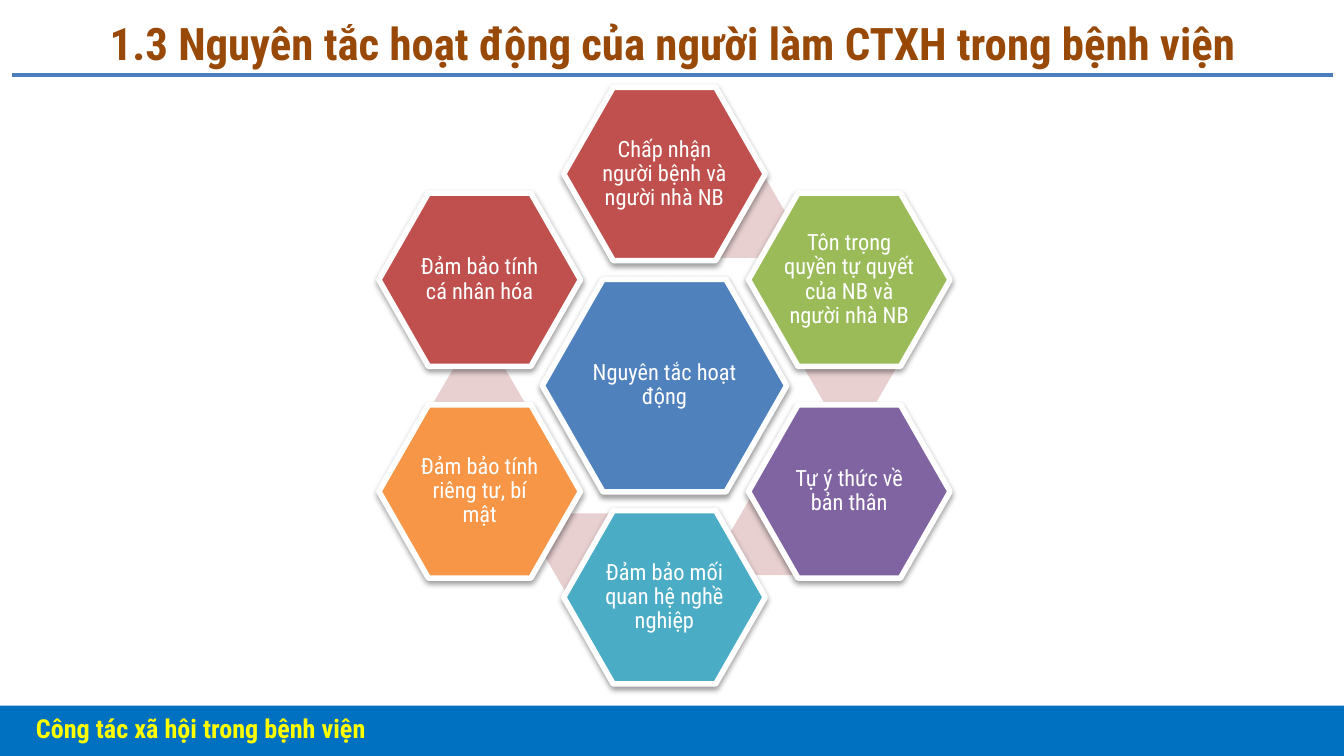
from typing import NamedTuple, Optional

from lxml.etree import SubElement
from pptx import Presentation
from pptx.dml.color import RGBColor
from pptx.enum.shapes import MSO_CONNECTOR as Connector, MSO_SHAPE as Shape
from pptx.enum.text import MSO_ANCHOR as Anchor, PP_ALIGN as Align
from pptx.oxml.ns import qn
from pptx.util import Pt

FONT = "Roboto Condensed"
COLORS = {
    "title": "984807", "rule": "4B7EBC", "band": "0070C0", "footer": "FFFF00",
    "white": "FFFFFF", "black": "000000", "accent": "E8D0D0",
    "blue": "4F81BD", "red": "C0504D", "green": "9BBB59",
    "purple": "8064A2", "teal": "4BACC6", "orange": "F79646",
}

# Ring geometry, in points
CENTER_X, CENTER_Y = 356, 206.6
COLUMN_STEP, ROW_STEP = 99, 56.7
CORE_SIZE = (131, 113.8)
PRINCIPLE_SIZE = (108, 92.9)
ACCENT_SIZE = (49.7, 42.5)


class Principle(NamedTuple):
    text: str
    color: str
    column: int
    row: int
    accent: Optional[tuple[float, float]] = None  # offset from the ring's center


PRINCIPLES = [
    Principle("Chấp nhận người bệnh và người nhà NB", "red", 0, -2, (41.8, -89.6)),
    Principle("Tôn trọng quyền tự quyết của NB và người nhà NB", "green", 1, -1, (99.4, -9.7)),
    Principle("Tự ý thức về bản thân", "purple", 1, 1, (59.1, 80.3)),
    Principle("Đảm bảo mối quan hệ nghề nghiệp", "teal", 0, 2, (-40.3, 89.7)),
    Principle("Đảm bảo tính riêng tư, bí mật", "orange", -1, 1, (-99.3, 9.8)),
    Principle("Đảm bảo tính cá nhân hóa", "red", -1, -1),
]


def rgb(name: str) -> RGBColor:
    return RGBColor.from_string(COLORS[name])


def write(frame, text: str, size: float, color: str, align, bold: bool = False):
    frame.word_wrap = True
    para = frame.paragraphs[0]
    para.alignment = align
    span = para.add_run()
    span.text = text
    span.font.name = FONT
    span.font.size = Pt(size)
    span.font.bold = bold
    span.font.color.rgb = rgb(color)
    return para


def add_filled(page, kind, left: float, top: float, width: float, height: float, color: str):
    shape = page.shapes.add_shape(kind, Pt(left), Pt(top), Pt(width), Pt(height))
    shape.shadow.inherit = False
    shape.fill.solid()
    shape.fill.fore_color.rgb = rgb(color)
    shape.line.fill.background()
    return shape


def add_hexagon(page, dx: float, dy: float, size: tuple[float, float], color: str):
    """Draw a hexagon whose middle is (dx, dy) away from the ring's center."""
    width, height = size
    hexagon = add_filled(page, Shape.HEXAGON, CENTER_X + dx - width / 2,
                         CENTER_Y + dy - height / 2, width, height, color)
    hexagon.adjustments[0] = 0.29
    return hexagon


def add_drop_shadow(shape) -> None:
    effects = shape._element.spPr.find(qn("a:effectLst"))
    shadow = SubElement(effects, qn("a:outerShdw"), blurRad=str(Pt(3.1)),
                        dist=str(Pt(1.6)), dir="5400000", rotWithShape="0")
    color = SubElement(shadow, qn("a:srgbClr"), val=COLORS["black"])
    SubElement(color, qn("a:alpha"), val="38000")


def add_label_hexagon(page, text: str, dx: float, dy: float,
                      size: tuple[float, float], color: str) -> None:
    hexagon = add_hexagon(page, dx, dy, size, color)
    hexagon.adjustments[0] = 0.286
    hexagon.line.color.rgb = rgb("white")
    hexagon.line.width = Pt(3)
    add_drop_shadow(hexagon)
    frame = hexagon.text_frame
    frame.margin_left = frame.margin_right = Pt(1.2)
    frame.margin_top = frame.margin_bottom = Pt(1.2)
    frame.vertical_anchor = Anchor.MIDDLE
    write(frame, text, 12, "white", Align.CENTER).line_spacing = 0.9


def add_header(page) -> None:
    rule = page.shapes.add_connector(Connector.STRAIGHT, Pt(6.5), Pt(40.3), Pt(714.2), Pt(40.3))
    rule.line.color.rgb = rgb("rule")
    rule.line.width = Pt(2)
    SubElement(rule._element.spPr, qn("a:effectLst"))

    title = page.shapes.title
    title.left, title.top, title.width, title.height = Pt(12.2), Pt(4.3), Pt(696.2), Pt(36.7)
    title.text_frame.vertical_anchor = Anchor.MIDDLE
    write(title.text_frame, "1.3 Nguyên tắc hoạt động của người làm CTXH trong bệnh viện",
          24, "title", Align.CENTER, bold=True)


def add_footer(page) -> None:
    add_filled(page, Shape.RECTANGLE, -3, 378, 726, 27, "band")
    box = page.shapes.add_textbox(Pt(12.2), Pt(378), Pt(688.3), Pt(23))
    write(box.text_frame, "Công tác xã hội trong bệnh viện", 14, "footer",
          Align.JUSTIFY, bold=True)


def main() -> None:
    deck = Presentation()
    deck.slide_width, deck.slide_height = Pt(720), Pt(405)
    page = deck.slides.add_slide(deck.slide_layouts[5])
    add_header(page)
    add_label_hexagon(page, "Nguyên tắc hoạt động", 0, 0, CORE_SIZE, "blue")
    for principle in PRINCIPLES:
        if principle.accent:
            add_hexagon(page, *principle.accent, ACCENT_SIZE, "accent")
        add_label_hexagon(page, principle.text, principle.column * COLUMN_STEP,
                          principle.row * ROW_STEP, PRINCIPLE_SIZE, principle.color)
    add_footer(page)
    deck.save("out.pptx")


if __name__ == "__main__":
    main()
